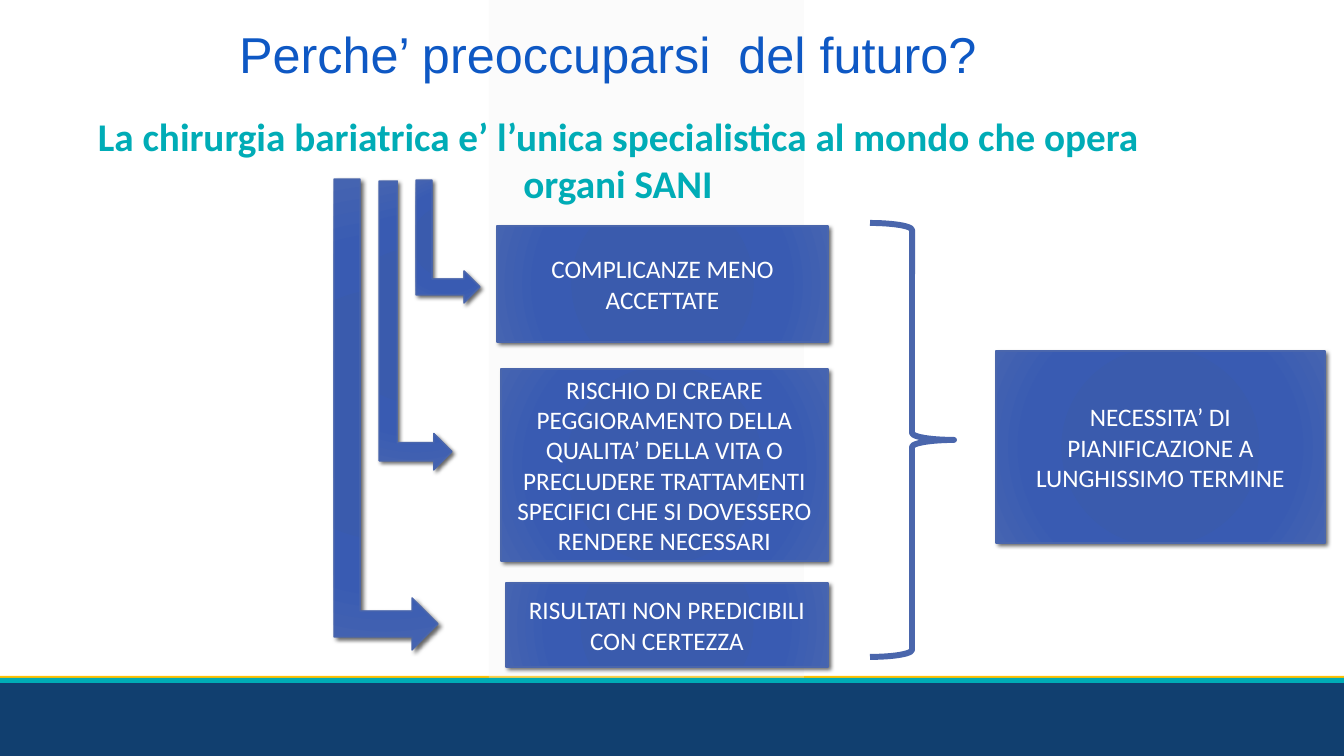
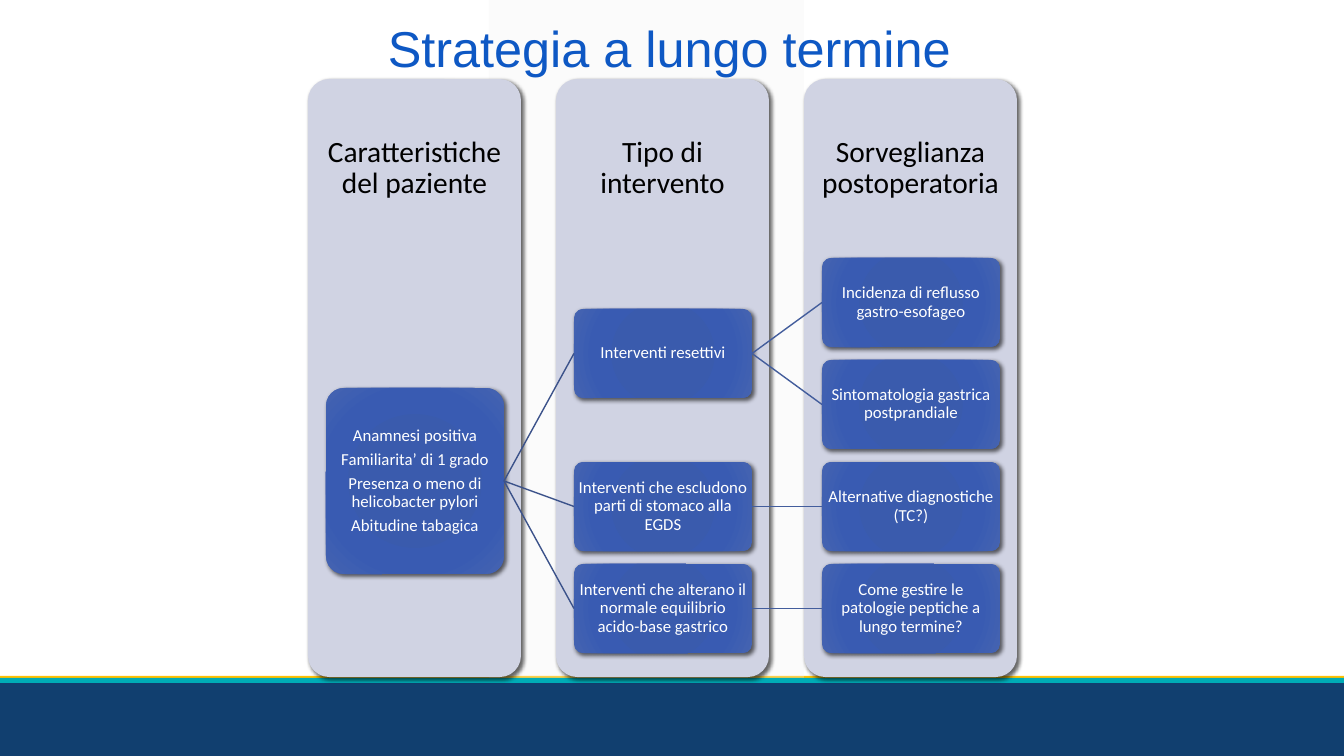
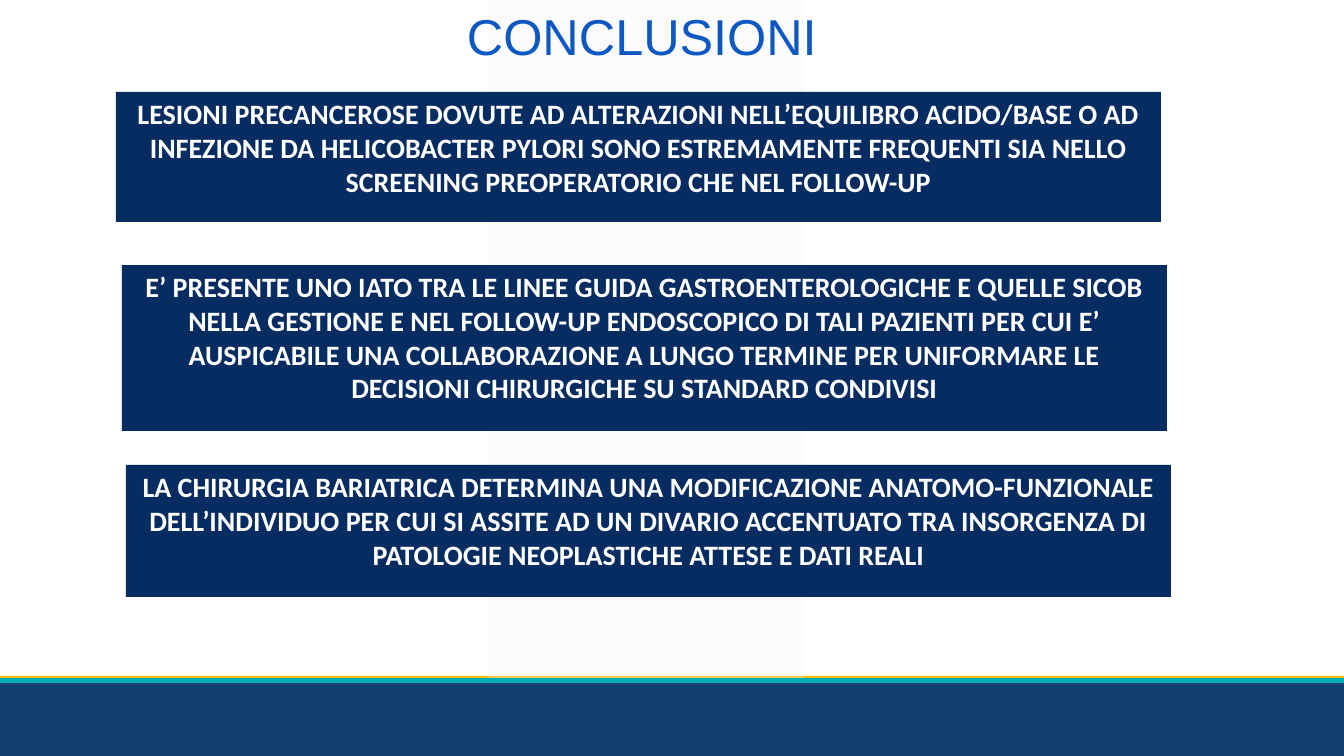
from lxml.etree import SubElement
from pptx import Presentation
from pptx.dml.color import RGBColor
from pptx.enum.shapes import MSO_CONNECTOR as Connector, MSO_SHAPE as Shape
from pptx.enum.text import MSO_ANCHOR as Anchor, PP_ALIGN as Align
from pptx.oxml import parse_xml
from pptx.oxml.ns import nsdecls, qn
from pptx.util import Emu, Pt

EMU_PER_PX = 914400 / 100.8
SLIDE_W, SLIDE_H = 1344, 756
TOP, LEFT, BOTTOM, RIGHT = range(4)

COLORS = {
    "title": "0E58C4",
    "teal": "00ACB6",
    "gold": "FFC000",
    "footer": "113F6F",
    "stripe": "F2F2F2",
    "panel": "D0D3E3",
    "statement": "072C62",
    "outline": "4A66AC",
    "first_link": "3B528A",
    "second_link": "435D9C",
    "white": "FFFFFF",
    "black": "000000",
}
GLOW_STOPS = {0: "3759AE", 34: "3A5BAD", 70: "395BB2", 100: "4564B1"}

TITLE = {"font": {"name": "Arial", "size": Pt(36)}, "color": "title"}
SUBTITLE = {"font": {"name": "Calibri", "size": Pt(28), "bold": True}, "color": "teal"}
CARD = {
    "font": {"name": "Calibri", "size": Pt(18)},
    "color": "white",
    "frame": {"vertical_anchor": Anchor.MIDDLE},
}
STATEMENT = {
    "font": {"name": "Calibri", "size": Pt(20), "bold": True},
    "color": "white",
    "frame": {"vertical_anchor": Anchor.TOP},
}


def px(length):
    return Emu(round(length * EMU_PER_PX))


def margins(length):
    sides = ("left", "top", "right", "bottom")
    return {f"margin_{side}": px(length) for side in sides}


HEADING = {
    "font": {"name": "Calibri", "size": Pt(21)},
    "color": "black",
    "frame": {"vertical_anchor": Anchor.MIDDLE, **margins(16)},
    "paragraph": {"line_spacing": 0.9, "space_after": Pt(7)},
}
NODE = {
    "font": {"name": "Calibri", "size": Pt(12)},
    "color": "white",
    "frame": {"vertical_anchor": Anchor.MIDDLE, **margins(1)},
    "paragraph": {"line_spacing": 0.9, "space_after": Pt(4)},
}


def rgb(color):
    return RGBColor.from_string(COLORS[color])


def apply(target, values):
    for name, value in values.items():
        setattr(target, name, value)


def write(shape, lines, style):
    frame = shape.text_frame
    apply(frame, {"word_wrap": True, **style.get("frame", {})})
    for index, line in enumerate(lines):
        paragraph = frame.add_paragraph() if index else frame.paragraphs[0]
        paragraph.text = line
        apply(paragraph, {"alignment": Align.CENTER, **style.get("paragraph", {})})
        apply(paragraph.font, style["font"])
        paragraph.font.color.rgb = rgb(style["color"])


def add_text(slide, box, text, style):
    write(slide.shapes.add_textbox(*map(px, box)), [text], style)


def add_plain(slide, kind, box, fill=None, line=None, width=1):
    shape = slide.shapes.add_shape(kind, *map(px, box))
    shape.shadow.inherit = False
    if fill:
        shape.fill.solid()
        shape.fill.fore_color.rgb = rgb(fill)
    else:
        shape.fill.background()
    if line:
        shape.line.color.rgb = rgb(line)
        shape.line.width = Pt(width)
    else:
        shape.line.fill.background()
    return shape


def cast_shadow(shape):
    effects = shape._element.spPr.find(qn("a:effectLst"))
    effects.append(parse_xml(
        f'<a:outerShdw {nsdecls("a")} blurRad="38100" dist="25400" dir="2700000" rotWithShape="0">'
        f'<a:srgbClr val="{COLORS["black"]}"><a:alpha val="60000"/></a:srgbClr></a:outerShdw>'
    ))


def add_glowing(slide, kind, box, line=None):
    shape = add_plain(slide, kind, box, line=line)
    properties = shape._element.spPr
    stops = "".join(
        f'<a:gs pos="{position * 1000}"><a:srgbClr val="{color}"/></a:gs>'
        for position, color in GLOW_STOPS.items()
    )
    properties.replace(properties.find(qn("a:noFill")), parse_xml(
        f'<a:gradFill {nsdecls("a")} rotWithShape="1"><a:gsLst>{stops}</a:gsLst>'
        '<a:path path="circle"><a:fillToRect l="100000" t="100000" r="100000" b="100000"/>'
        '</a:path></a:gradFill>'
    ))
    cast_shadow(shape)
    return shape


def add_card(slide, box, text):
    write(add_glowing(slide, Shape.RECTANGLE, box, "outline"), [text], CARD)


def add_bent_arrow(slide, left, top, width, height):
    shift = (width - height) / 2
    box = (left + shift, top - shift, height, width)
    add_glowing(slide, Shape.BENT_UP_ARROW, box, "outline").rotation = 90


def add_panel(slide, box, heading, heading_height):
    panel = add_plain(slide, Shape.ROUNDED_RECTANGLE, box, "panel")
    panel.adjustments[0] = 0.1
    cast_shadow(panel)
    add_text(slide, (*box[:3], heading_height), heading, HEADING)


def add_node(slide, box, *lines):
    node = add_glowing(slide, Shape.ROUNDED_RECTANGLE, box)
    node.adjustments[0] = 0.1
    write(node, lines, NODE)
    return node


def link(slide, source, target, color):
    connector = slide.shapes.add_connector(Connector.STRAIGHT, 0, 0, 0, 0)
    connector.begin_connect(source, RIGHT)
    connector.end_connect(target, LEFT)
    connector.line.color.rgb = rgb(color)
    connector.line.width = Pt(1)
    SubElement(connector._element.spPr, qn("a:effectLst"))


def add_slide(deck, title, title_box):
    slide = deck.slides.add_slide(deck.slide_layouts[6])
    add_plain(slide, Shape.RECTANGLE, (0, 676, SLIDE_W, 5), "gold")
    add_plain(slide, Shape.RECTANGLE, (0, 680, SLIDE_W, SLIDE_H - 680), "footer")
    stripe = add_plain(slide, Shape.RECTANGLE, (489, 0, 315, 680), "stripe")
    stripe_color = stripe._element.spPr.find(qn("a:solidFill"))[0]
    SubElement(stripe_color, qn("a:alpha"), val="30000")
    add_plain(slide, Shape.RECTANGLE, (0, 678, SLIDE_W, 5), "teal")
    add_text(slide, title_box, title, TITLE)
    return slide


def build_future(deck):
    slide = add_slide(deck, "Perche’ preoccuparsi  del futuro?", (216, 18, 784, 72))
    add_text(
        slide, (61, 107, 1114, 121),
        "La chirurgia bariatrica e’ l’unica specialistica al mondo che opera organi SANI",
        SUBTITLE,
    )
    cards = [
        ((497, 226, 331, 116), "COMPLICANZE MENO ACCETTATE"),
        ((501, 369, 327, 192),
         "RISCHIO DI CREARE PEGGIORAMENTO DELLA QUALITA’ DELLA VITA O PRECLUDERE "
         "TRATTAMENTI SPECIFICI CHE SI DOVESSERO RENDERE NECESSARI"),
        ((996, 351, 329, 192), "NECESSITA’ DI PIANIFICAZIONE A LUNGHISSIMO TERMINE"),
        ((506, 583, 322, 84), "RISULTATI NON PREDICIBILI CON CERTEZZA"),
    ]
    for box, text in cards:
        add_card(slide, box, text)
    for arrow in [(416, 180, 64, 123), (379, 181, 73, 289), (334, 179, 104, 471)]:
        add_bent_arrow(slide, *arrow)
    add_plain(slide, Shape.RIGHT_BRACE, (870, 223, 84, 434), line="outline", width=4.25)


def build_strategy(deck):
    slide = add_slide(deck, "Strategia a lungo termine", (308, 12, 723, 72))
    panel_left, column_pitch = 308, 248
    node_left, node_width, node_height = panel_left + 18, 178, 89
    first_row, row_pitch = 258, 102

    headings = ["Caratteristiche del paziente", "Tipo di intervento", "Sorveglianza postoperatoria"]
    for column, heading in enumerate(headings):
        add_panel(slide, (panel_left + column * column_pitch, 79, 213, 598), heading, 179)

    def place(column, row, text):
        left = node_left + column * column_pitch
        top = first_row + row * row_pitch
        return add_node(slide, (left, top, node_width, node_height), text)

    patient = add_node(
        slide, (node_left, 388, node_width, 186),
        "Anamnesi positiva",
        "Familiarita’ di 1 grado",
        "Presenza o meno di helicobacter pylori",
        "Abitudine tabagica",
    )
    operations = [
        (0.5, "Interventi resettivi",
         {0: "Incidenza di reflusso gastro-esofageo", 1: "Sintomatologia gastrica postprandiale"}),
        (2, "Interventi che escludono parti di stomaco alla EGDS",
         {2: "Alternative diagnostiche (TC?)"}),
        (3, "Interventi che alterano il normale equilibrio acido-base gastrico",
         {3: "Come gestire le patologie peptiche a lungo termine?"}),
    ]
    for row, text, follow_ups in operations:
        operation = place(1, row, text)
        link(slide, patient, operation, "first_link")
        for follow_up_row, follow_up in follow_ups.items():
            link(slide, operation, place(2, follow_up_row, follow_up), "second_link")


def build_conclusions(deck):
    slide = add_slide(deck, "CONCLUSIONI", (17, 0, 1250, 72))
    statements = [
        ((116, 92, 1045, 130),
         "LESIONI PRECANCEROSE DOVUTE AD ALTERAZIONI NELL’EQUILIBRO ACIDO/BASE O AD INFEZIONE "
         "DA HELICOBACTER PYLORI SONO ESTREMAMENTE FREQUENTI SIA NELLO SCREENING PREOPERATORIO "
         "CHE NEL FOLLOW-UP"),
        ((122, 265, 1045, 166),
         "E’ PRESENTE UNO IATO TRA LE LINEE GUIDA GASTROENTEROLOGICHE E QUELLE SICOB NELLA "
         "GESTIONE E NEL FOLLOW-UP ENDOSCOPICO DI TALI PAZIENTI PER CUI E’ AUSPICABILE UNA "
         "COLLABORAZIONE A LUNGO TERMINE PER UNIFORMARE LE DECISIONI CHIRURGICHE SU STANDARD "
         "CONDIVISI"),
        ((126, 465, 1045, 132),
         "LA CHIRURGIA BARIATRICA DETERMINA UNA MODIFICAZIONE ANATOMO-FUNZIONALE DELL’INDIVIDUO "
         "PER CUI SI ASSITE AD UN DIVARIO ACCENTUATO TRA INSORGENZA DI PATOLOGIE NEOPLASTICHE "
         "ATTESE E DATI REALI"),
    ]
    for box, text in statements:
        write(add_plain(slide, Shape.RECTANGLE, box, "statement"), [text], STATEMENT)


def main():
    deck = Presentation()
    deck.slide_width, deck.slide_height = px(SLIDE_W), px(SLIDE_H)
    build_future(deck)
    build_strategy(deck)
    build_conclusions(deck)
    deck.save("out.pptx")


if __name__ == "__main__":
    main()
